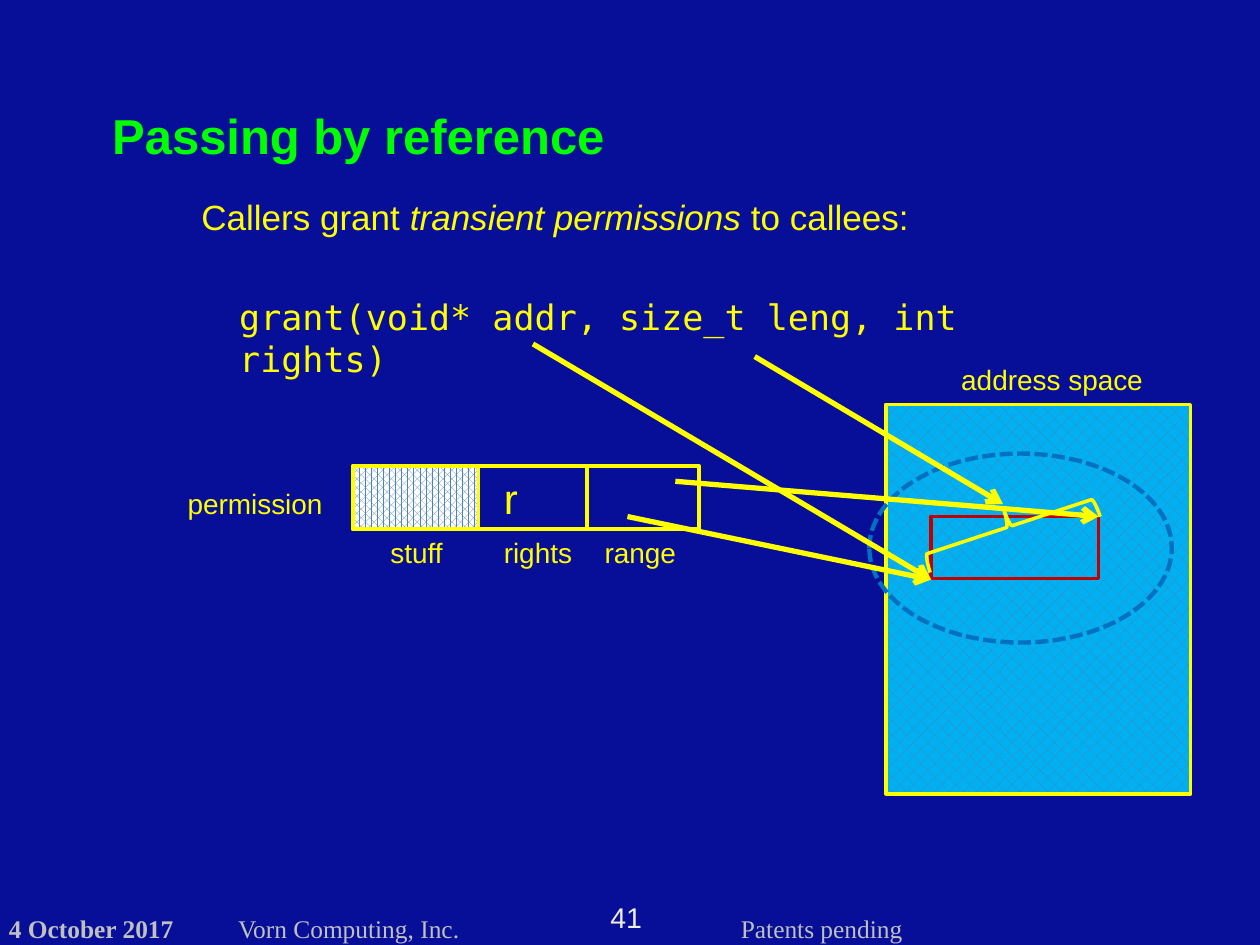
from lxml import etree
from pptx import Presentation
from pptx.dml.color import RGBColor
from pptx.enum import dml, shapes, text
from pptx.oxml import ns
from pptx.util import Inches, Pt

COLORS = {
    "background": "070E97", "title": "00FF00", "ink": "FFFF00",
    "footer": "C0C0C0", "number": "EEECE1", "memory": "00B0F0",
    "hatch": "4F81BD", "white": "FFFFFF", "range": "C00000", "turf": "0070C0",
}
COLORS = {part: RGBColor.from_string(value) for part, value in COLORS.items()}


def add_text(box, runs, size, color, font="Arial", bold=False,
             align=text.PP_ALIGN.LEFT, inset=None, wrap=False):
    frame = box.text_frame
    frame.word_wrap = wrap
    frame.auto_size = text.MSO_AUTO_SIZE.SHAPE_TO_FIT_TEXT
    if inset is not None:
        frame.margin_left = frame.margin_right = Inches(inset)
        frame.margin_top = frame.margin_bottom = Inches(inset)
    paragraph = frame.paragraphs[0]
    paragraph.alignment = align
    for words, italic in runs:
        run = paragraph.add_run()
        run.text = words
        run.font.size = Pt(size)
        run.font.name = font
        run.font.bold = bold
        run.font.italic = italic
        run.font.color.rgb = COLORS[color]


def add_line(parent, start, end, width, arrow=False):
    line = parent.add_connector(shapes.MSO_CONNECTOR.STRAIGHT,
                                *map(Inches, start + end))
    line.line.color.rgb = COLORS["ink"]
    line.line.width = Pt(width)
    if arrow:
        etree.SubElement(line.line._get_or_add_ln(), ns.qn("a:tailEnd"), type="arrow")
    etree.SubElement(line._element.spPr, ns.qn("a:effectLst"))


deck = Presentation()
deck.slide_width, deck.slide_height = Inches(10), Inches(7.5)
slide = deck.slides.add_slide(deck.slide_layouts[5])
slide.background.fill.solid()
slide.background.fill.fore_color.rgb = COLORS["background"]
canvas = slide.shapes

# Title
title = canvas.title
title.left, title.top, title.width, title.height = map(Inches, (0.8, 0.8, 9.05, 0.5))
add_text(title, [("Passing by reference", False)], 28, "title", bold=True, wrap=True)
title.text_frame.auto_size = text.MSO_AUTO_SIZE.NONE
title.text_frame.vertical_anchor = text.MSO_ANCHOR.TOP
title.text_frame.margin_left = title.text_frame.margin_right = Inches(0.09)
title.text_frame.margin_top = Inches(0.04)
title.text_frame.margin_bottom = Inches(0.02)

# Footer
footers = [
    ("4 October 2017", 0.07, 7.25, 1.35, True),
    ("Vorn Computing, Inc.", 1.89, 7.25, 2.2, False),
    ("Patents pending", 5.88, 7.25, 1.5, False),
]
for words, left, top, width, bold in footers:
    footer = canvas.add_textbox(Inches(left), Inches(top), Inches(width), Inches(0.23))
    add_text(footer, [(words, False)], 14.5, "footer", "Times New Roman", bold,
             inset=0, wrap=True)
page_number = canvas.add_textbox(Inches(4.83), Inches(7.14), Inches(0.28), Inches(0.26))
add_text(page_number, [("41", False)], 16.3, "number",
         align=text.PP_ALIGN.CENTER, inset=0)

# Address space, permission record and their parts
permission = canvas.add_group_shape().shapes
kinds = shapes.MSO_SHAPE
patterns = dml.MSO_PATTERN
outlines = [
    (canvas, kinds.RECTANGLE, (7.03, 3.21, 2.42, 3.09), "ink", 2,
     (patterns.PERCENT_25, "memory")),
    (canvas, kinds.RECTANGLE, (7.39, 4.1, 1.33, 0.49), "range", 2, None),
    (canvas, kinds.OVAL, (6.9, 3.6, 2.4, 1.5), "turf", 2.5, None),
    (canvas, kinds.LEFT_BRACE, (7.86, 3.47, 0.3, 1.42), "ink", 2, None),
    (permission, kinds.RECTANGLE, (2.8, 3.7, 2.75, 0.5), "ink", 2, None),
    (canvas, kinds.RECTANGLE, (2.8, 3.7, 1, 0.5), "ink", 2,
     (patterns.PERCENT_70, "white")),
]
for parent, kind, place, color, width, hatch in outlines:
    outline = parent.add_shape(kind, *map(Inches, place))
    outline.shadow.inherit = False
    outline.line.color.rgb = COLORS[color]
    outline.line.width = Pt(width)
    if hatch:
        outline.fill.patterned()
        outline.fill.pattern = hatch[0]
        outline.fill.fore_color.rgb = COLORS["hatch"]
        outline.fill.back_color.rgb = COLORS[hatch[1]]
    else:
        outline.fill.background()
    if kind == kinds.OVAL:
        outline.line.dash_style = dml.MSO_LINE.SQUARE_DOT
    if kind == kinds.LEFT_BRACE:
        outline.rotation = 71.8

for divider in (4.66, 3.75):
    add_line(permission, (divider, 3.7), (divider, 4.2), 2)

# Statement and call signature
statement = canvas.add_textbox(Inches(1.5), Inches(1.5), Inches(5.86), Inches(0.44))
add_text(statement, [("Callers grant ", False), ("transient permissions ", True),
                     ("to callees:", False)], 20, "ink")
signature = canvas.add_textbox(Inches(1.8), Inches(2.3), Inches(6.68), Inches(0.44))
add_text(signature, [("grant(void* addr, size_t leng, int rights)", False)],
         20, "ink", "DejaVu Sans Mono", wrap=True)

# Labels
labels = [
    ("address space", 7.52, 2.83, 1.66, 0.37, 16, text.PP_ALIGN.CENTER),
    ("permission", 1.39, 3.81, 1.29, 0.37, 16, text.PP_ALIGN.LEFT),
    ("stuff", 3, 4.2, 0.62, 0.37, 16, text.PP_ALIGN.LEFT),
    ("rights", 3.9, 4.2, 0.75, 0.37, 16, text.PP_ALIGN.LEFT),
    ("range", 4.7, 4.2, 0.78, 0.37, 16, text.PP_ALIGN.LEFT),
    ("r", 3.9, 3.7, 0.31, 0.5, 24, text.PP_ALIGN.LEFT),
]
for words, left, top, width, height, size, align in labels:
    label = canvas.add_textbox(*map(Inches, (left, top, width, height)))
    add_text(label, [(words, False)], size, "ink", align=align)

# Arrows from the arguments and the range field into the address space
arrows = [
    ((4.23, 2.73), (7.39, 4.6)),
    ((5.99, 2.83), (7.96, 4)),
    ((4.98, 4.1), (7.39, 4.6)),
    ((5.36, 3.82), (8.72, 4.1)),
]
for start, end in arrows:
    add_line(canvas, start, end, 3, arrow=True)

deck.save("out.pptx")
